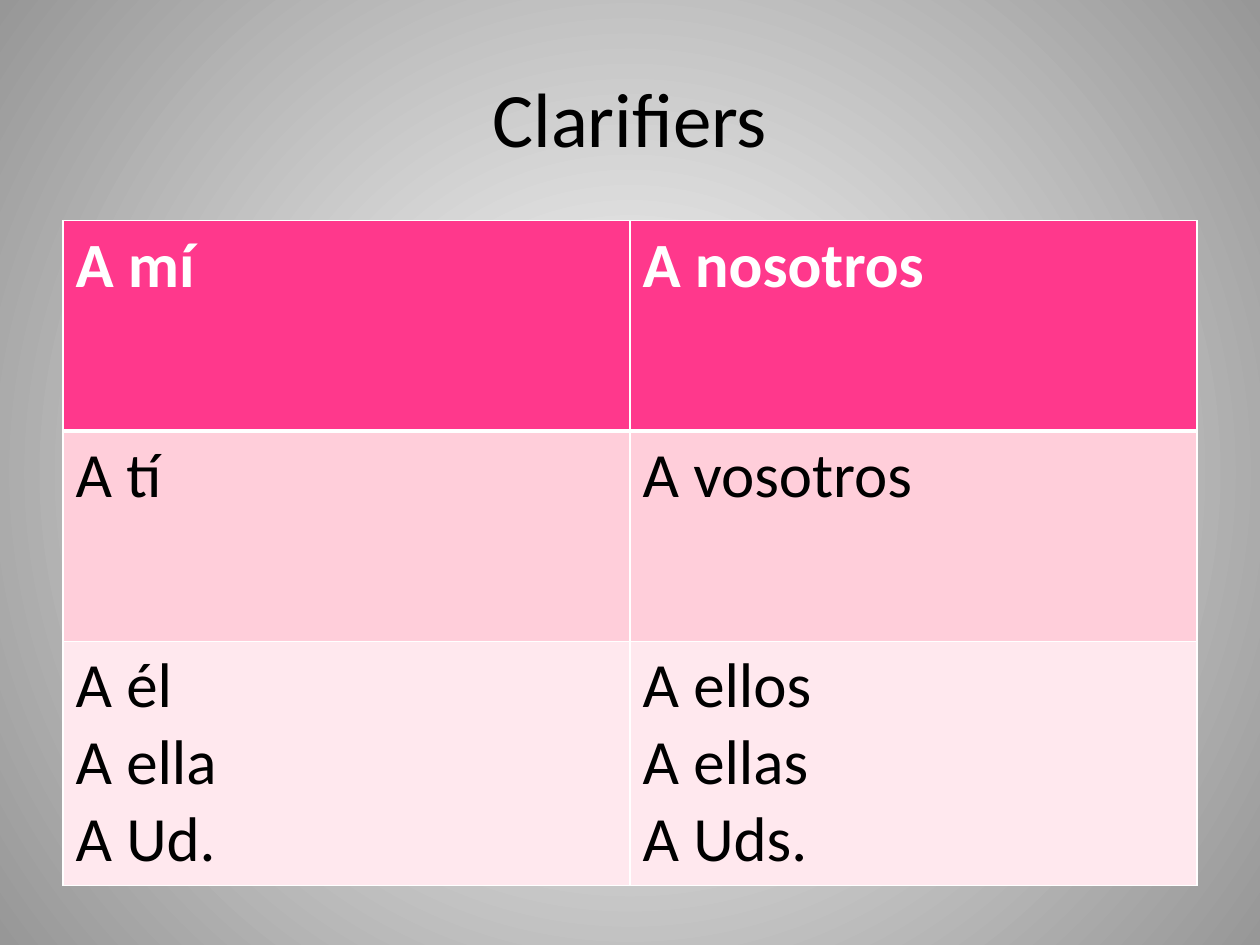
import lxml.etree
import pptx
import pptx.dml.color
import pptx.enum.text
import pptx.oxml.ns
import pptx.util

Cm, Pt = pptx.util.Cm, pptx.util.Pt
qn = pptx.oxml.ns.qn

WHITE, BLACK = "FFFFFF", "000000"
ROW_FILLS = ["FF388C", "FFCEDA", "FFE8EE"]
CLARIFIERS = [
    ["A mí", "A nosotros"],
    ["A tí", "A vosotros"],
    ["A él\nA ella\nA Ud.", "A ellos\nA ellas\nA Uds."],
]
TITLE_FORMAT = {"name": "Calibri", "size": Pt(44), "bold": False}
HEADER_FORMAT = {"name": "Calibri", "size": Pt(36), "bold": True}
BODY_FORMAT = HEADER_FORMAT | {"bold": False}


def color(hex_text):
    """Return the RGB colour for a hex string."""
    return pptx.dml.color.RGBColor.from_string(hex_text)


def set_attributes(target, values):
    """Set every attribute of the target from a dict."""
    for name, value in values.items():
        setattr(target, name, value)


def write_text(text_frame, text, font_format, hex_text):
    """Fill a text frame and format each of its runs."""
    text_frame.text = text
    for paragraph in text_frame.paragraphs:
        for run in paragraph.runs:
            set_attributes(run.font, font_format)
            run.font.color.rgb = color(hex_text)


def set_background(slide, center, edge):
    """Give the slide a circular gradient from its center to its edge."""
    fill = slide.background.fill
    fill.gradient()
    for stop, position, hex_text in zip(fill.gradient_stops, (0, 1), (center, edge)):
        stop.position = position
        stop.color.rgb = color(hex_text)
    gradient = slide.element.find(".//" + qn("a:gradFill"))
    linear = gradient.find(qn("a:lin"))
    circle = lxml.etree.Element(qn("a:path"), {"path": "circle"})
    lxml.etree.SubElement(
        circle, qn("a:fillToRect"), {side: "50000" for side in "ltrb"}
    )
    gradient.replace(linear, circle)


def add_title(slide, text):
    """Place and format the title placeholder."""
    title = slide.shapes.title
    set_attributes(title, {
        "left": Cm(1.27), "top": Cm(0.76), "width": Cm(22.86), "height": Cm(3.18),
    })
    write_text(title.text_frame, text, TITLE_FORMAT, BLACK)
    title.text_frame.vertical_anchor = pptx.enum.text.MSO_ANCHOR.MIDDLE
    title.text_frame.paragraphs[0].alignment = pptx.enum.text.PP_ALIGN.CENTER


def set_borders(cell, widths):
    """Draw white cell borders with a width in points for each side."""
    properties = cell._tc.get_or_add_tcPr()
    for side, width in widths.items():
        line = lxml.etree.SubElement(
            properties, qn("a:ln" + side), {"w": str(Pt(width))}
        )
        solid = lxml.etree.SubElement(line, qn("a:solidFill"))
        lxml.etree.SubElement(solid, qn("a:srgbClr"), {"val": WHITE})


def add_table(slide, rows, fills):
    """Add the table with a bold header row and a fill for each row."""
    frame = slide.shapes.add_table(
        len(rows), len(rows[0]), Cm(1.27), Cm(4.45), Cm(22.86), Cm(12.72)
    )
    for row_index, (texts, fill) in enumerate(zip(rows, fills)):
        is_header = row_index == 0
        font_format, hex_text = (
            (HEADER_FORMAT, WHITE) if is_header else (BODY_FORMAT, BLACK)
        )
        widths = {
            "L": 1, "R": 1, "T": 3 if row_index == 1 else 1, "B": 3 if is_header else 1,
        }
        for column_index, text in enumerate(texts):
            cell = frame.table.cell(row_index, column_index)
            write_text(cell.text_frame, text, font_format, hex_text)
            set_borders(cell, widths)
            cell.fill.solid()
            cell.fill.fore_color.rgb = color(fill)


def main():
    """Build the slide and save the presentation."""
    presentation = pptx.Presentation()
    set_attributes(presentation, {"slide_width": Cm(25.4), "slide_height": Cm(19.05)})
    slide = presentation.slides.add_slide(presentation.slide_layouts[5])
    set_background(slide, WHITE, "979797")
    add_title(slide, "Clarifiers")
    add_table(slide, CLARIFIERS, ROW_FILLS)
    presentation.save("out.pptx")


if __name__ == "__main__":
    main()
